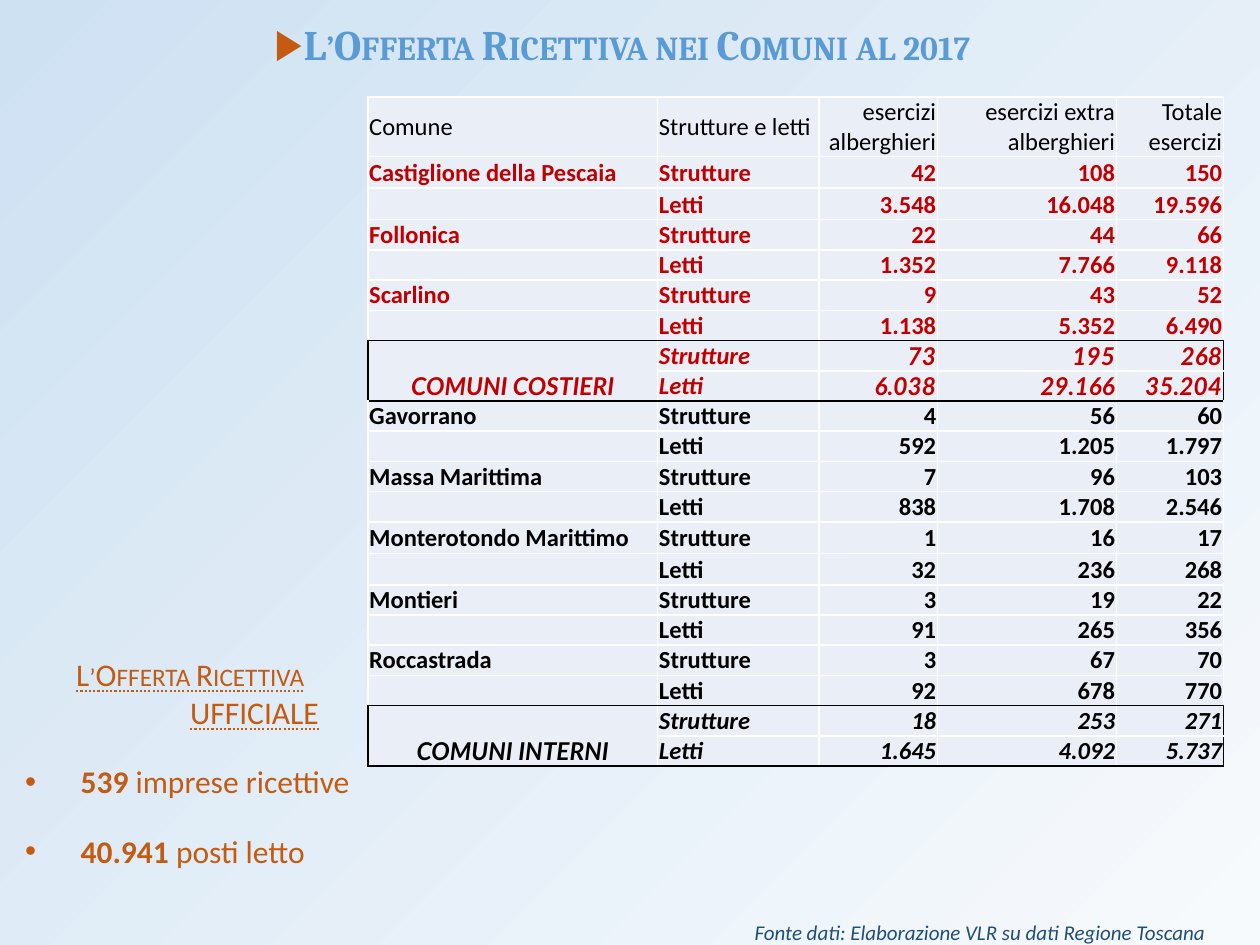
from dataclasses import dataclass
from typing import Any

from lxml.etree import SubElement
from pptx import Presentation
from pptx.dml.color import RGBColor
from pptx.enum.text import MSO_ANCHOR as Anchor
from pptx.enum.text import MSO_AUTO_SIZE as AutoSize
from pptx.enum.text import MSO_TEXT_UNDERLINE_TYPE as Underline
from pptx.enum.text import PP_ALIGN as Align
from pptx.oxml.ns import qn
from pptx.util import Inches, Pt

BLACK = RGBColor(0x00, 0x00, 0x00)
WHITE = RGBColor(0xFF, 0xFF, 0xFF)
RED = RGBColor(0xC0, 0x00, 0x00)
ORANGE = RGBColor(0xC5, 0x5A, 0x11)
SKY = RGBColor(0x5B, 0x9B, 0xD5)
NAVY = RGBColor(0x1F, 0x4E, 0x79)
CELL_BLUE = RGBColor(0xEA, 0xEF, 0xF7)
PALE = RGBColor(0xF7, 0xFA, 0xFD)
LIGHT_BLUE = RGBColor(0xCE, 0xE1, 0xF2)

HEADINGS = ["Comune", "Strutture e letti", "esercizi alberghieri",
            "esercizi extra alberghieri", "Totale esercizi"]
COLUMN_WIDTHS = [2.3, 1.28, 0.94, 1.42, 0.85]
TALL_ROWS = {1, 2, 13, 14}


@dataclass
class Municipality:
    name: str
    facilities: str
    beds: str
    color: RGBColor = BLACK
    subtotal: bool = False
    figure_font: str = "Calibri"


MUNICIPALITIES = [
    Municipality("Castiglione della Pescaia", "42 108 150", "3.548 16.048 19.596", RED),
    Municipality("Follonica", "22 44 66", "1.352 7.766 9.118", RED),
    Municipality("Scarlino", "9 43 52", "1.138 5.352 6.490", RED),
    Municipality("COMUNI COSTIERI", "73 195 268", "6.038 29.166 35.204", RED, True, "Lato"),
    Municipality("Gavorrano", "4 56 60", "592 1.205 1.797"),
    Municipality("Massa Marittima", "7 96 103", "838 1.708 2.546"),
    Municipality("Monterotondo Marittimo", "1 16 17", "32 236 268"),
    Municipality("Montieri", "3 19 22", "91 265 356"),
    Municipality("Roccastrada", "3 67 70", "92 678 770"),
    Municipality("COMUNI INTERNI", "18 253 271", "1.645 4.092 5.737", BLACK, True),
]


def apply(target: Any, values: dict[str, Any]) -> None:
    for name, value in values.items():
        setattr(target, name, value)


def place(shape: Any, left: float, top: float, width: float, height: float) -> None:
    apply(shape, {"left": Inches(left), "top": Inches(top),
                  "width": Inches(width), "height": Inches(height)})


def add_run(paragraph: Any, text: str, size: float, color: RGBColor,
            small_caps: bool = False, **font_values: Any) -> None:
    run = paragraph.add_run()
    run.text = text
    apply(run.font, {"size": Pt(size), **font_values})
    run.font.color.rgb = color
    if small_caps:
        run.font._element.set("cap", "small")


def set_bullet(paragraph: Any, symbol: str = "", indent: float = 0) -> None:
    properties = paragraph._p.get_or_add_pPr()
    properties.set("marL", str(Inches(indent)))
    properties.set("indent", str(Inches(-indent)))
    if symbol:
        color = SubElement(properties, qn("a:buClr"))
        SubElement(color, qn("a:srgbClr"), val=str(ORANGE))
        SubElement(properties, qn("a:buFont"), typeface="Arial")
        SubElement(properties, qn("a:buChar"), char=symbol)
    else:
        SubElement(properties, qn("a:buNone"))


def set_borders(cell: Any, black_sides: str) -> None:
    for side in "LRTB":
        line = SubElement(cell._tc.get_or_add_tcPr(), qn(f"a:ln{side}"), w=str(Pt(1)))
        fill = SubElement(line, qn("a:solidFill"))
        SubElement(fill, qn("a:srgbClr"), val=str(BLACK if side in black_sides else WHITE))


def fill_cell(cell: Any, text: str, align: Align, anchor: Anchor, color: RGBColor,
              black_sides: str = "", **font_values: Any) -> None:
    margin = Inches(0.01)
    apply(cell, {"margin_left": margin, "margin_right": margin, "margin_top": 0,
                 "margin_bottom": 0, "vertical_anchor": anchor})
    set_borders(cell, black_sides)
    cell.fill.solid()
    cell.fill.fore_color.rgb = CELL_BLUE
    paragraph = cell.text_frame.paragraphs[0]
    paragraph.alignment = align
    if text:
        add_run(paragraph, text, 14, color, **font_values)
    else:
        SubElement(paragraph._p, qn("a:endParaRPr"), sz="1400")


def add_municipality(table: Any, index: int, place_data: Municipality) -> None:
    first_row = 1 + 2 * index
    entries = [("Strutture", place_data.facilities), ("Letti", place_data.beds)]
    before_subtotal = index + 1 < len(MUNICIPALITIES) and MUNICIPALITIES[index + 1].subtotal
    after_subtotal = index > 0 and MUNICIPALITIES[index - 1].subtotal
    if place_data.subtotal:
        table.cell(first_row, 0).merge(table.cell(first_row + 1, 0))
    for offset, (measure, figures) in enumerate(entries):
        texts = [place_data.name if offset == 0 else "", measure, *figures.split()]
        for column, text in enumerate(texts):
            sides = ""
            if offset == 0 and (place_data.subtotal or after_subtotal):
                sides += "T"
            if offset == 1 and (place_data.subtotal or before_subtotal):
                sides += "B"
            if place_data.subtotal and column == 0:
                sides += "LTB"
            if place_data.subtotal and column == 4:
                sides += "R"
            align = Align.RIGHT if column > 1 else Align.LEFT
            font = place_data.figure_font if column > 1 else "Calibri"
            if place_data.subtotal and column == 0:
                align, font = Align.CENTER, "Lato"
            fill_cell(table.cell(first_row + offset, column), text, align, Anchor.BOTTOM,
                      place_data.color, sides, name=font, bold=True,
                      italic=place_data.subtotal)


def add_accommodation_table(slide: Any) -> None:
    row_count = 1 + 2 * len(MUNICIPALITIES)
    table = slide.shapes.add_table(row_count, len(HEADINGS), Inches(2.92), Inches(0.77),
                                   Inches(6.8), Inches(5.3)).table
    apply(table, {"first_row": False, "horz_banding": False})
    for column, width in zip(table.columns, COLUMN_WIDTHS):
        column.width = Inches(width)
    for index, row in enumerate(table.rows):
        row.height = Inches(0.47 if index == 0 else 0.25 if index in TALL_ROWS else 0.24)
    for column, heading in enumerate(HEADINGS):
        fill_cell(table.cell(0, column), heading, Align.RIGHT if column > 1 else Align.LEFT,
                  Anchor.MIDDLE, BLACK, name="Calibri", bold=False)
    for index, municipality in enumerate(MUNICIPALITIES):
        add_municipality(table, index, municipality)


def add_summary(summary: Any) -> None:
    place(summary, 0.1, 5.15, 2.82, 1.82)
    frame = summary.text_frame
    apply(frame, {"auto_size": AutoSize.NONE, "word_wrap": True})
    spacing = {"space_before": Pt(9), "space_after": Pt(9)}
    heading = frame.paragraphs[0]
    apply(heading, {"alignment": Align.CENTER, **spacing})
    set_bullet(heading)
    add_run(heading, "L’Offerta Ricettiva UFFICIALE", 18, ORANGE, True,
            name="Calibri", underline=Underline.DOTTED_LINE)
    for figure, label in [("539 ", "imprese ricettive"), ("40.941 ", "posti letto")]:
        paragraph = frame.add_paragraph()
        apply(paragraph, spacing)
        set_bullet(paragraph, "•", 0.44)
        add_run(paragraph, figure, 18, ORANGE, name="Calibri", bold=True)
        add_run(paragraph, label, 18, ORANGE, name="Calibri", bold=False)


def main() -> None:
    deck = Presentation()
    apply(deck, {"slide_width": Inches(10), "slide_height": Inches(7.5)})
    slide = deck.slides.add_slide(deck.slide_layouts[1])
    background = slide.background.fill
    background.gradient()
    background.gradient_angle = 135
    for stop, color in zip(background.gradient_stops, [PALE, LIGHT_BLUE]):
        stop.color.rgb = color

    title = slide.shapes.title
    place(title, 0, 0.1, 10, 0.5)
    apply(title.text_frame, {"auto_size": AutoSize.NONE, "vertical_anchor": Anchor.MIDDLE,
                             "margin_right": Inches(0.22)})
    headline = title.text_frame.paragraphs[0]
    headline.alignment = Align.CENTER
    set_bullet(headline, "▶", 0.23)
    add_run(headline, "L’Offerta Ricettiva nei Comuni al 2017", 24, SKY, True,
            name="Cambria", bold=True)

    add_accommodation_table(slide)
    add_summary(slide.placeholders[1])

    credit = slide.shapes.add_textbox(Inches(5.89), Inches(7.25), Inches(4.11), Inches(0.3))
    credit.text_frame.word_wrap = True
    add_run(credit.text_frame.paragraphs[0],
            "Fonte dati: Elaborazione VLR su dati Regione Toscana", 12, NAVY,
            name="Calibri", italic=True)
    deck.save("out.pptx")


if __name__ == "__main__":
    main()
